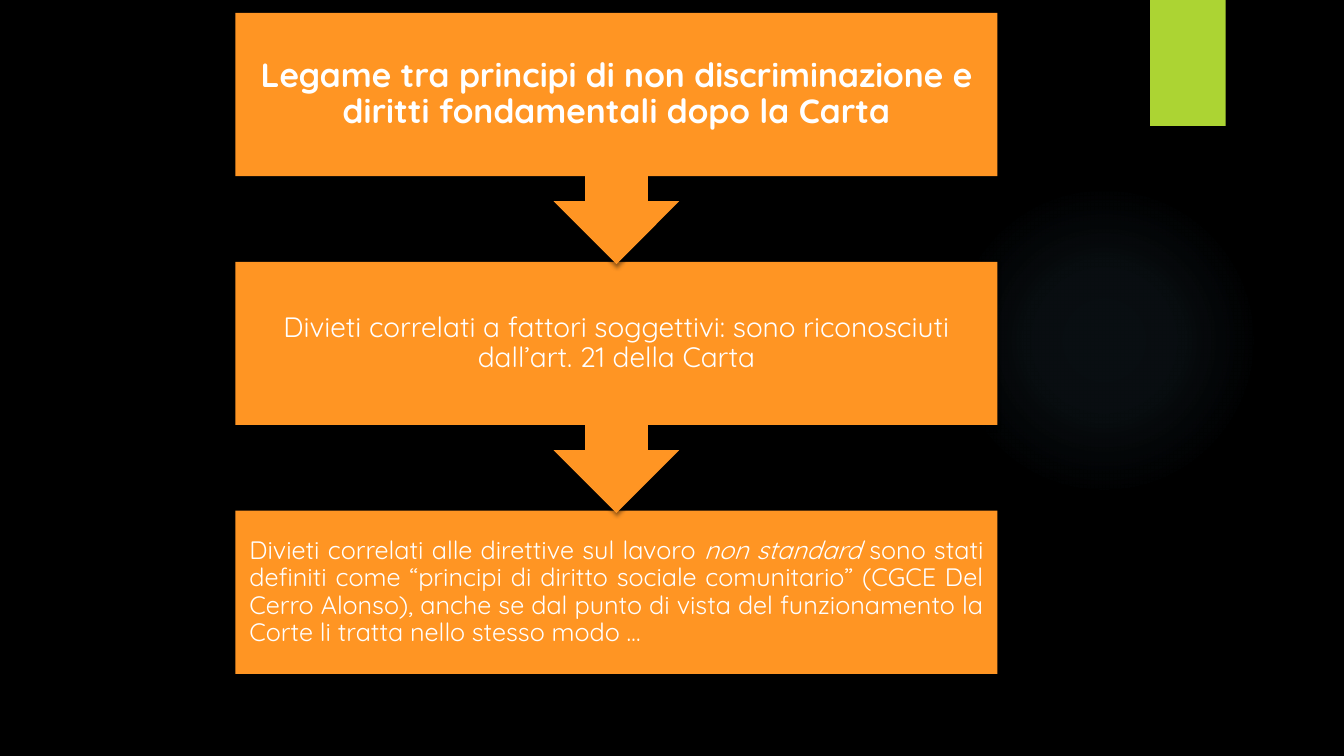
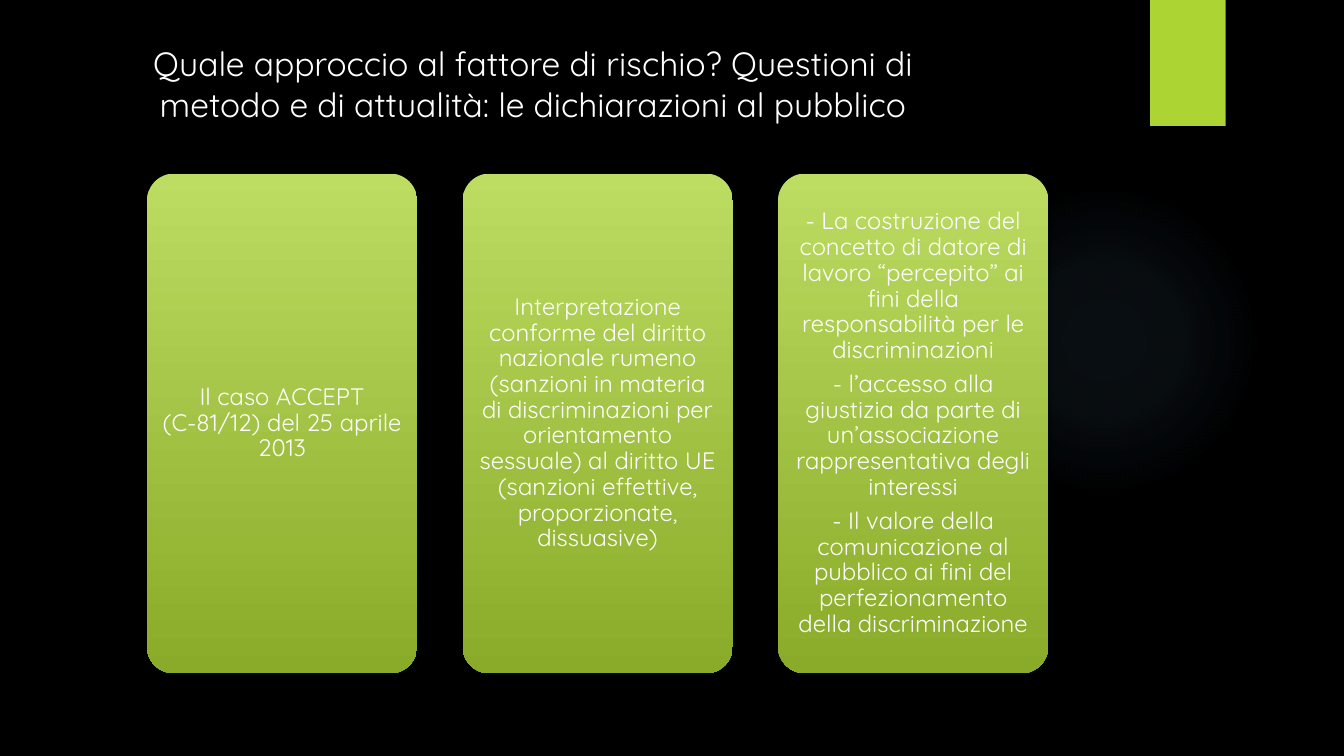
from lxml.etree import SubElement
from pptx import Presentation
from pptx.dml.color import RGBColor
from pptx.enum.shapes import MSO_SHAPE
from pptx.enum.text import MSO_ANCHOR, PP_ALIGN
from pptx.oxml import parse_xml
from pptx.oxml.ns import nsdecls, qn
from pptx.util import Pt

COLORS = {
    "background": "000000",
    "text": "FFFFFF",
    "tab": "ACD433",
    "glow": "7AC4F0",
    "step": "FF9523",
    "card_top": "BCDC62",
    "card_bottom": "8AAA29",
    "shadow": "000000",
}
FONT = "Quicksand"
GLOW_STOPS = ((0, 7), (36, 6), (69, 0))


def rgb(name):
    return RGBColor.from_string(COLORS[name])


class Deck:
    def __init__(self):
        self.presentation = Presentation()
        self.presentation.slide_width = Pt(960)
        self.presentation.slide_height = Pt(540)
        fill = self.presentation.slide_master.background.fill
        fill.solid()
        fill.fore_color.rgb = rgb("background")
        self.slide = None

    def add_slide(self):
        self.slide = self.presentation.slides.add_slide(self.presentation.slide_layouts[6])
        self.add_glow()
        self.add_shape(MSO_SHAPE.RECTANGLE, (821.5, 0, 54, 90), "tab")

    def add_shape(self, kind, box, color=None, shadow=True):
        shape = self.slide.shapes.add_shape(kind, *map(Pt, box))
        shape.line.fill.background()
        shape.shadow.inherit = False
        if color:
            shape.fill.solid()
            shape.fill.fore_color.rgb = rgb(color)
        if shadow:
            self.add_shadow(shape)
        return shape

    def add_shadow(self, shape):
        effects = shape._element.spPr.find(qn("a:effectLst"))
        outer = SubElement(effects, qn("a:outerShdw"), blurRad=str(Pt(3)), dist=str(Pt(2)),
                           dir="5400000", rotWithShape="0")
        color = SubElement(outer, qn("a:srgbClr"), val=COLORS["shadow"])
        SubElement(color, qn("a:alpha"), val="45000")

    def add_glow(self):
        glow = self.add_shape(MSO_SHAPE.OVAL, (677.5, 131.8, 221.8, 221.8), "glow", shadow=False)
        stops = "".join(
            f'<a:gs pos="{position * 1000}"><a:srgbClr val="{COLORS["glow"]}">'
            f'<a:alpha val="{alpha * 1000}"/></a:srgbClr></a:gs>'
            for position, alpha in GLOW_STOPS
        )
        gradient = parse_xml(
            f'<a:gradFill {nsdecls("a")}><a:gsLst>{stops}</a:gsLst><a:path path="circle">'
            '<a:fillToRect l="50000" t="50000" r="50000" b="50000"/></a:path></a:gradFill>'
        )
        properties = glow._element.spPr
        properties.replace(properties.find(qn("a:solidFill")), gradient)

    def add_text(self, shape, paragraphs, size, inset, alignment=PP_ALIGN.CENTER, bold=False,
                 anchor=MSO_ANCHOR.MIDDLE, line_spacing=0.9):
        frame = shape.text_frame
        frame.word_wrap = True
        frame.vertical_anchor = anchor
        frame.margin_left = frame.margin_right = Pt(inset)
        frame.margin_top = frame.margin_bottom = Pt(inset)
        for index, runs in enumerate(paragraphs):
            paragraph = frame.add_paragraph() if index else frame.paragraphs[0]
            paragraph.alignment = alignment
            paragraph.line_spacing = line_spacing
            if index:
                paragraph.space_before = Pt(6)
            paragraph.font.name = FONT
            paragraph.font.size = Pt(size)
            paragraph.font.bold = bold
            paragraph.font.color.rgb = rgb("text")
            for position, text in enumerate(runs):
                run = paragraph.add_run()
                run.text = text
                if position % 2:
                    run.font.italic = True

    def add_title(self, text):
        title = self.slide.shapes.add_textbox(Pt(94.3), Pt(26), Pt(572.4), Pt(94.3))
        self.add_text(title, [[text]], 24, 5, anchor=MSO_ANCHOR.TOP, line_spacing=1)

    def add_step(self, kind, top, height, runs, size, inset, **style):
        step = self.add_shape(kind, (168.2, top, 544.3, height), "step")
        self.add_text(step, [runs], size, inset, **style)

    def add_card(self, left, texts):
        card = self.add_shape(MSO_SHAPE.ROUNDED_RECTANGLE, (left, 124, 193, 357))
        card.adjustments[0] = 0.1
        card.fill.gradient()
        card.fill.gradient_angle = 270
        for stop, color in zip(card.fill.gradient_stops, ("card_top", "card_bottom")):
            stop.color.rgb = rgb(color)
        self.add_text(card, [[text] for text in texts], 17, 5)


def build_principles(deck):
    deck.add_slide()
    top, pitch = 9.2, 177.8
    deck.add_step(
        MSO_SHAPE.RECTANGLE, top + 2 * pitch, 116.6,
        ["Divieti correlati alle direttive sul lavoro ", "non standard ",
         "sono stati definiti come “principi di diritto sociale comunitario” (CGCE Del Cerro "
         "Alonso), anche se dal punto di vista del funzionamento la Corte li tratta nello "
         "stesso modo …"],
        18, 10, alignment=PP_ALIGN.JUSTIFY,
    )
    deck.add_step(
        MSO_SHAPE.DOWN_ARROW_CALLOUT, top + pitch, 179.4,
        ["Divieti correlati a fattori soggettivi: sono riconosciuti dall’art. 21 della Carta"],
        20, 11.5,
    )
    deck.add_step(
        MSO_SHAPE.DOWN_ARROW_CALLOUT, top, 179.4,
        ["Legame tra principi di non discriminazione e diritti fondamentali dopo la Carta"],
        24, 13.5, bold=True,
    )


def build_case(deck):
    deck.add_slide()
    cards = (
        ["Il caso ACCEPT (C-81/12) del 25 aprile 2013"],
        ["Interpretazione conforme del diritto nazionale rumeno (sanzioni in materia di "
         "discriminazioni per orientamento sessuale) al diritto UE (sanzioni effettive, "
         "proporzionate, dissuasive)"],
        ["- La costruzione del concetto di datore di lavoro “percepito” ai fini della "
         "responsabilità per le discriminazioni",
         "- l’accesso alla giustizia da parte di un’associazione rappresentativa degli interessi",
         "- Il valore della comunicazione al pubblico ai fini del perfezionamento della "
         "discriminazione"],
    )
    for index, texts in enumerate(cards):
        deck.add_card(105 + index * 225.4, texts)
    deck.add_title("Quale approccio al fattore di rischio? Questioni di metodo e di attualità: "
                   "le dichiarazioni al pubblico")


def main():
    deck = Deck()
    build_principles(deck)
    build_case(deck)
    deck.presentation.save("out.pptx")


if __name__ == "__main__":
    main()
